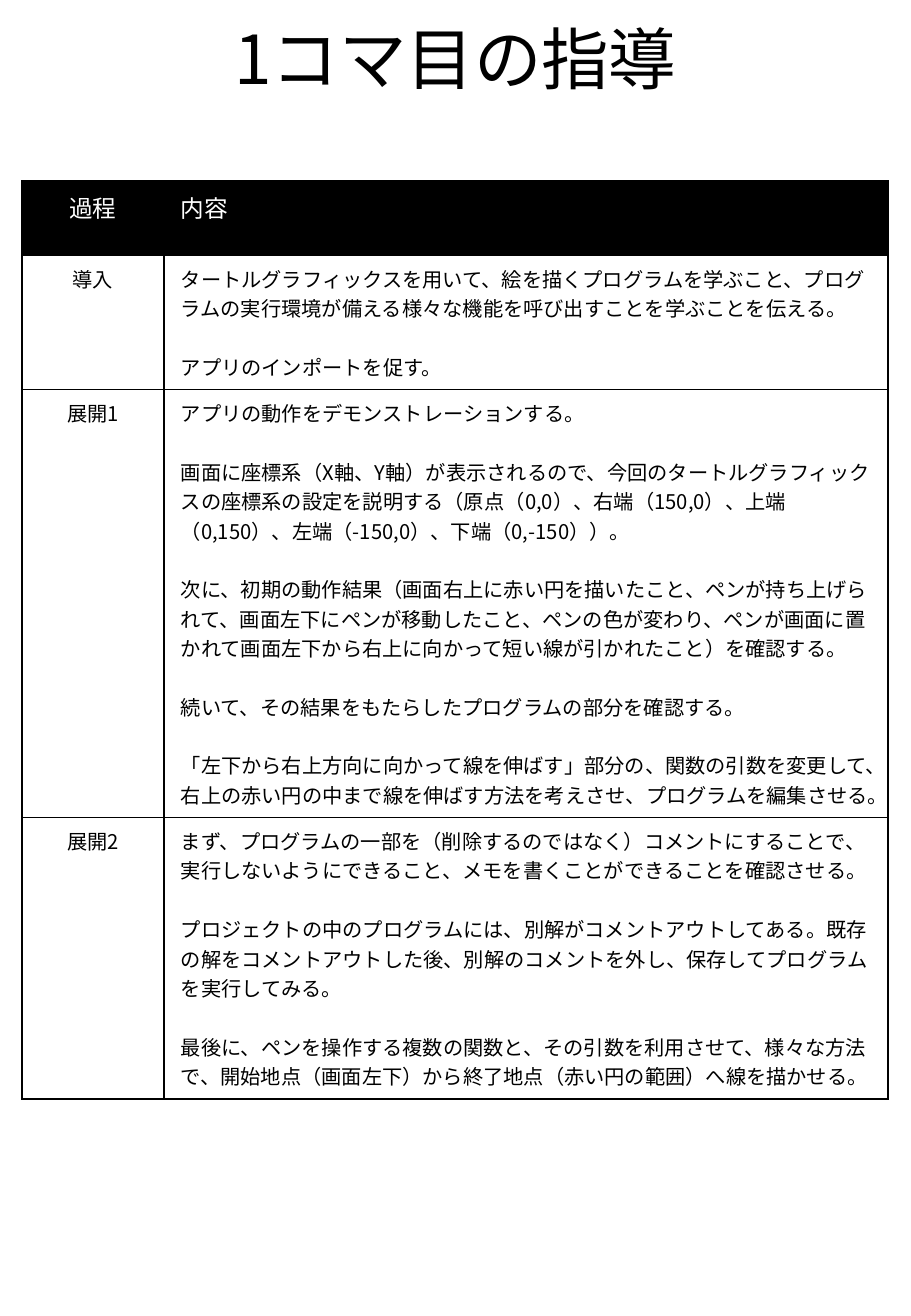
import dataclasses

import lxml.etree
import pptx
import pptx.dml.color
import pptx.enum.lang
import pptx.enum.text
import pptx.oxml.ns
import pptx.util

Inches = pptx.util.Inches
Pt = pptx.util.Pt
ALIGN = pptx.enum.text.PP_ALIGN
ANCHOR = pptx.enum.text.MSO_ANCHOR


@dataclasses.dataclass(frozen=True)
class Theme:
    font: str = "Noto Sans CJK JP"
    ink: str = "000000"
    paper: str = "FFFFFF"
    title_size: float = 40
    header_size: float = 14
    body_size: float = 12
    paragraph_gap: float = 17.4
    border_width: float = 1


TITLE = "1コマ目の指導"
HEADER = ("過程", "内容")
LESSON_STEPS = [
    ("導入", [
        "タートルグラフィックスを用いて、絵を描くプログラムを学ぶこと、プログラムの実行環境が備える様々な機能を呼び出すことを学ぶことを伝える。",
        "アプリのインポートを促す。",
    ]),
    ("展開1", [
        "アプリの動作をデモンストレーションする。",
        "画面に座標系（X軸、Y軸）が表示されるので、今回のタートルグラフィックスの座標系の設定を説明する（原点（0,0）、右端（150,0）、上端（0,150）、左端（-150,0）、下端（0,-150））。",
        "次に、初期の動作結果（画面右上に赤い円を描いたこと、ペンが持ち上げられて、画面左下にペンが移動したこと、ペンの色が変わり、ペンが画面に置かれて画面左下から右上に向かって短い線が引かれたこと）を確認する。",
        "続いて、その結果をもたらしたプログラムの部分を確認する。",
        "「左下から右上方向に向かって線を伸ばす」部分の、関数の引数を変更して、右上の赤い円の中まで線を伸ばす方法を考えさせ、プログラムを編集させる。",
    ]),
    ("展開2", [
        "まず、プログラムの一部を（削除するのではなく）コメントにすることで、実行しないようにできること、メモを書くことができることを確認させる。",
        "プロジェクトの中のプログラムには、別解がコメントアウトしてある。既存の解をコメントアウトした後、別解のコメントを外し、保存してプログラムを実行してみる。",
        "最後に、ペンを操作する複数の関数と、その引数を利用させて、様々な方法で、開始地点（画面左下）から終了地点（赤い円の範囲）へ線を描かせる。",
    ]),
]
COLUMN_WIDTHS = (1.17, 5.96)
ROW_HEIGHTS = (0.61, 1, 3.06, 2.02)


def write_text(frame, paragraphs, *, theme, size, color, align=ALIGN.LEFT, line_spacing=None):
    for index, text in enumerate(paragraphs):
        paragraph = frame.add_paragraph() if index else frame.paragraphs[0]
        paragraph.alignment = align
        paragraph.line_spacing = line_spacing
        if index:
            paragraph.space_before = Pt(theme.paragraph_gap)
        run = paragraph.add_run()
        run.text = text
        run.font.size = Pt(size)
        run.font.bold = False
        run.font.language_id = pptx.enum.lang.MSO_LANGUAGE_ID.JAPANESE
        run.font.color.rgb = pptx.dml.color.RGBColor.from_string(color)
        run.font.name = theme.font
        east_asian = lxml.etree.SubElement(run._r.get_or_add_rPr(), pptx.oxml.ns.qn("a:ea"))
        east_asian.set("typeface", theme.font)


class LessonSlide:
    def __init__(self, presentation, theme):
        self.theme = theme
        self.slide = presentation.slides.add_slide(presentation.slide_layouts[0])

    def add_title(self, text, left, top, width, height):
        subtitle = self.slide.placeholders[1]
        subtitle.element.getparent().remove(subtitle.element)
        title = self.slide.shapes.title
        title.left, title.top = Inches(left), Inches(top)
        title.width, title.height = Inches(width), Inches(height)
        title.text_frame.vertical_anchor = ANCHOR.BOTTOM
        write_text(title.text_frame, [text], theme=self.theme, size=self.theme.title_size,
                   color=self.theme.ink, align=ALIGN.CENTER, line_spacing=0.9)

    def add_borders(self, cell):
        properties = cell._tc.get_or_add_tcPr()
        for side in ("lnL", "lnR", "lnT", "lnB"):
            line = lxml.etree.SubElement(properties, pptx.oxml.ns.qn(f"a:{side}"))
            line.set("w", str(Pt(self.theme.border_width)))
            fill = lxml.etree.SubElement(line, pptx.oxml.ns.qn("a:solidFill"))
            color = lxml.etree.SubElement(fill, pptx.oxml.ns.qn("a:srgbClr"))
            color.set("val", self.theme.ink)

    def fill_cell(self, cell, paragraphs, is_header, align):
        theme = self.theme
        cell.margin_left = cell.margin_right = Inches(0.14)
        cell.margin_top = cell.margin_bottom = Inches(0.07)
        cell.vertical_anchor = ANCHOR.TOP
        self.add_borders(cell)
        if is_header:
            cell.fill.solid()
            cell.fill.fore_color.rgb = pptx.dml.color.RGBColor.from_string(theme.ink)
        else:
            cell.fill.background()
        write_text(cell.text_frame, paragraphs, theme=theme, align=align,
                   size=theme.header_size if is_header else theme.body_size,
                   color=theme.paper if is_header else theme.ink)

    def add_lesson_table(self, left, top):
        rows = [(HEADER[0], [HEADER[1]])] + LESSON_STEPS
        frame = self.slide.shapes.add_table(
            len(rows), len(COLUMN_WIDTHS), Inches(left), Inches(top),
            Inches(sum(COLUMN_WIDTHS)), Inches(sum(ROW_HEIGHTS)))
        table = frame.table
        table.first_row = table.horz_banding = False
        for column, width in zip(table.columns, COLUMN_WIDTHS):
            column.width = Inches(width)
        for index, (stage, details) in enumerate(rows):
            table.rows[index].height = Inches(ROW_HEIGHTS[index])
            self.fill_cell(table.cell(index, 0), [stage], index == 0, ALIGN.CENTER)
            self.fill_cell(table.cell(index, 1), details, index == 0, ALIGN.LEFT)


def main():
    presentation = pptx.Presentation()
    presentation.slide_width = Inches(7.5)
    presentation.slide_height = Inches(10.83)
    lesson = LessonSlide(presentation, Theme())
    lesson.add_title(TITLE, 0.56, 0.06, 6.38, 0.81)
    lesson.add_lesson_table(0.18, 1.49)
    presentation.save("out.pptx")


if __name__ == "__main__":
    main()
